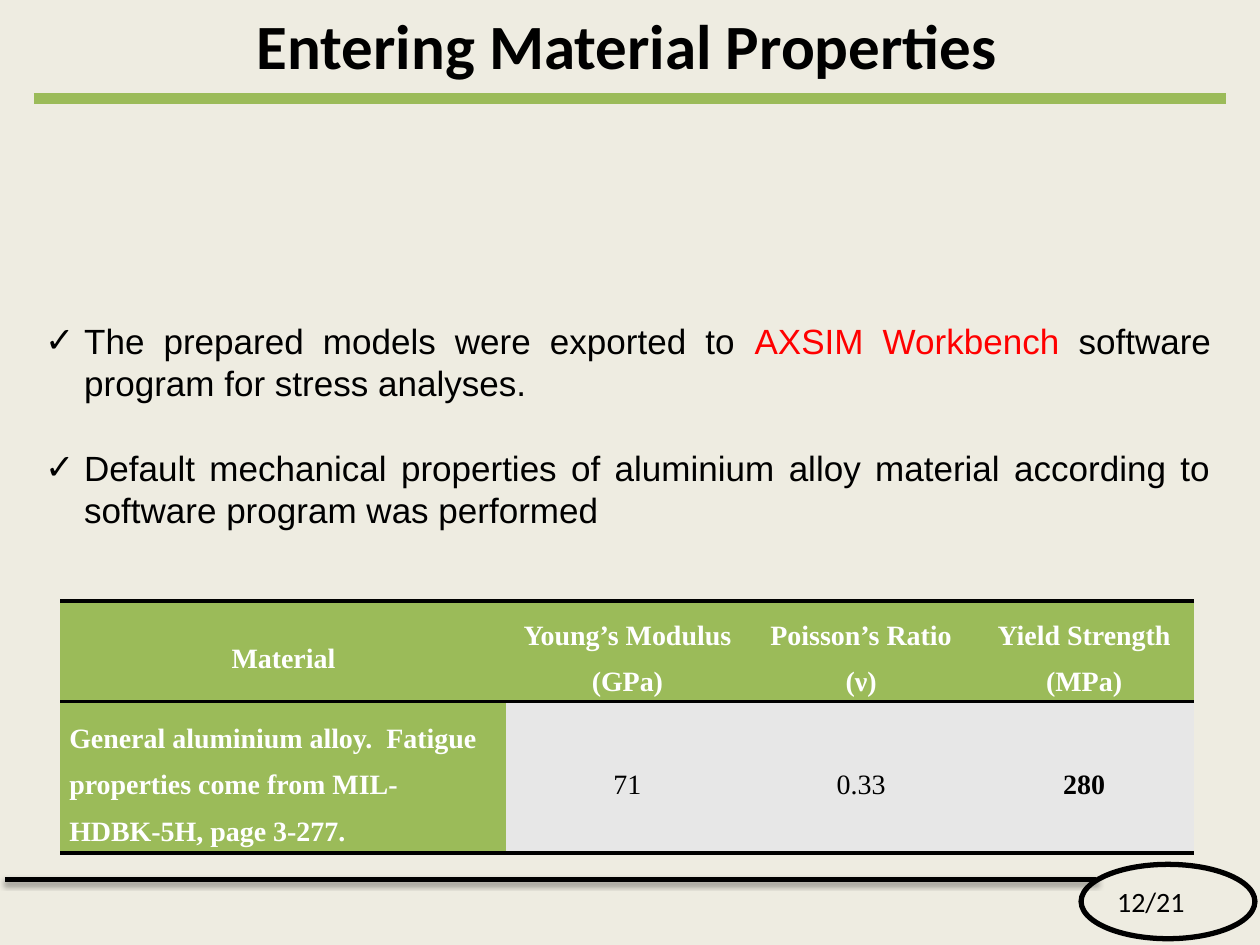
from lxml.etree import SubElement
from pptx import Presentation
from pptx.dml.color import RGBColor
from pptx.enum.shapes import MSO_CONNECTOR, MSO_SHAPE
from pptx.enum.text import MSO_ANCHOR as Anchor, PP_ALIGN as Align
from pptx.oxml import parse_xml
from pptx.oxml.ns import qn
from pptx.util import Inches, Pt

BLACK, WHITE, RED = "000000", "FFFFFF", "FF0000"
GREEN, GREY, CREAM = "9BBB59", "E7E7E7", "EEECE1"
NAMESPACE = 'xmlns:a="http://schemas.openxmlformats.org/drawingml/2006/main"'


def paint(target, color):
    """Give a fill or a line format one solid colour."""
    if hasattr(target, "solid"):
        target.solid()
        target.fore_color.rgb = RGBColor.from_string(color)
    else:
        paint(target.fill, color)


def write(para, text, font="Calibri", size=16, color=BLACK, bold=False,
          align=Align.LEFT, spacing=None):
    para.alignment = align
    para.line_spacing = spacing
    span = para.add_run()
    span.text = text
    span.font.name = font
    span.font.size = Pt(size)
    span.font.bold = bold
    paint(span.font.fill, color)


deck = Presentation()
deck.slide_width, deck.slide_height = Inches(10), Inches(7.5)
page = deck.slides.add_slide(deck.slide_layouts[6])
paint(page.background.fill, CREAM)

# Rules under the title and above the footer
SHADOW = ('<a:outerShdw blurRad="39370" dist="22860" dir="5400000" rotWithShape="0">'
          '<a:srgbClr val="000000"><a:alpha val="35000"/></a:srgbClr></a:outerShdw>')
for left, right, top, color, width, effect in [
    (0.04, 8.7, 6.98, BLACK, 3, SHADOW),
    (0.27, 9.73, 0.78, GREEN, 6, ""),
]:
    rule = page.shapes.add_connector(MSO_CONNECTOR.STRAIGHT, Inches(left), Inches(top),
                                     Inches(right), Inches(top))
    paint(rule.line, color)
    rule.line.width = Pt(width)
    rule._element.spPr.append(parse_xml(f"<a:effectLst {NAMESPACE}>{effect}</a:effectLst>"))

# Page number in its ring
ring = page.shapes.add_shape(MSO_SHAPE.OVAL, Inches(8.58), Inches(6.86),
                             Inches(1.38), Inches(0.59))
ring.shadow.inherit = False
ring.fill.background()
paint(ring.line, BLACK)
ring.line.width = Pt(3)

frames = []
for left, top, width, height, anchor in [
    (7.17, 6.95, 2.33, 0.4, Anchor.MIDDLE),
    (0.27, 0, 9.41, 0.78, Anchor.TOP),
    (0.26, 2.49, 9.45, 1.78, Anchor.TOP),
]:
    box = page.shapes.add_textbox(Inches(left), Inches(top), Inches(width), Inches(height))
    box.text_frame.word_wrap = True
    box.text_frame.vertical_anchor = anchor
    frames.append(box.text_frame)
number, title, body = frames
write(number.paragraphs[0], "12/21", align=Align.RIGHT)
write(title.paragraphs[0], "Entering Material Properties", size=36, bold=True,
      align=Align.CENTER)

# Check-marked points
points = [
    [("The prepared models were exported to ", BLACK), ("AXSIM Workbench ", RED),
     ("software program for stress analyses.", BLACK)],
    [("Default mechanical properties of aluminium alloy material according to "
      "software program was performed", BLACK)],
]
for index, point in enumerate(points):
    para = body.add_paragraph() if index else body.paragraphs[0]
    para.space_before = Pt(24 * index)
    for text, color in point:
        write(para, text, font="Arial", size=20, color=color, align=Align.JUSTIFY)
    properties = para._p.get_or_add_pPr()
    properties.set("marL", str(Inches(0.31)))
    properties.set("indent", str(Inches(-0.31)))
    SubElement(properties, qn("a:buFont"), typeface="Arial")
    SubElement(properties, qn("a:buChar"), char="✓")

# Material table
rows = [
    ["Material", "Young’s Modulus\n(GPa)", "Poisson’s Ratio (ν)", "Yield Strength (MPa)"],
    ["General aluminium alloy.  Fatigue properties come from MIL-HDBK-5H, page 3-277.",
     "71", "0.33", "280"],
]
table = page.shapes.add_table(2, 4, Inches(0.48), Inches(4.77), Inches(9), Inches(2)).table
for column, width in zip(table.columns, [3.54, 1.92, 1.79, 1.75]):
    column.width = Inches(width)
for row, height in zip(table.rows, [0.8, 1.2]):
    row.height = Inches(height)

for r, texts in enumerate(rows):
    for c, text in enumerate(texts):
        cell = table.cell(r, c)
        heading = r == 0 or c == 0
        cell.vertical_anchor = Anchor.MIDDLE
        cell.margin_left = cell.margin_right = Inches(0.07)
        cell.margin_top = cell.margin_bottom = 0
        for index, line in enumerate(text.split("\n")):
            para = cell.text_frame.add_paragraph() if index else cell.text_frame.paragraphs[0]
            write(para, line, font="Times New Roman", color=WHITE if heading else BLACK,
                  bold=heading or c == 3, spacing=1.5,
                  align=Align.LEFT if r and c == 0 else Align.CENTER)
        cell_properties = cell._tc.get_or_add_tcPr()
        for side in ("lnL", "lnR", "lnT", "lnB"):
            border = SubElement(cell_properties, qn(f"a:{side}"), w=str(Pt(2)))
            if side in ("lnT", "lnB"):
                solid = SubElement(border, qn("a:solidFill"))
                SubElement(solid, qn("a:srgbClr"), val=BLACK)
            else:
                SubElement(border, qn("a:noFill"))
        paint(cell.fill, GREEN if heading else GREY)

deck.save("out.pptx")
